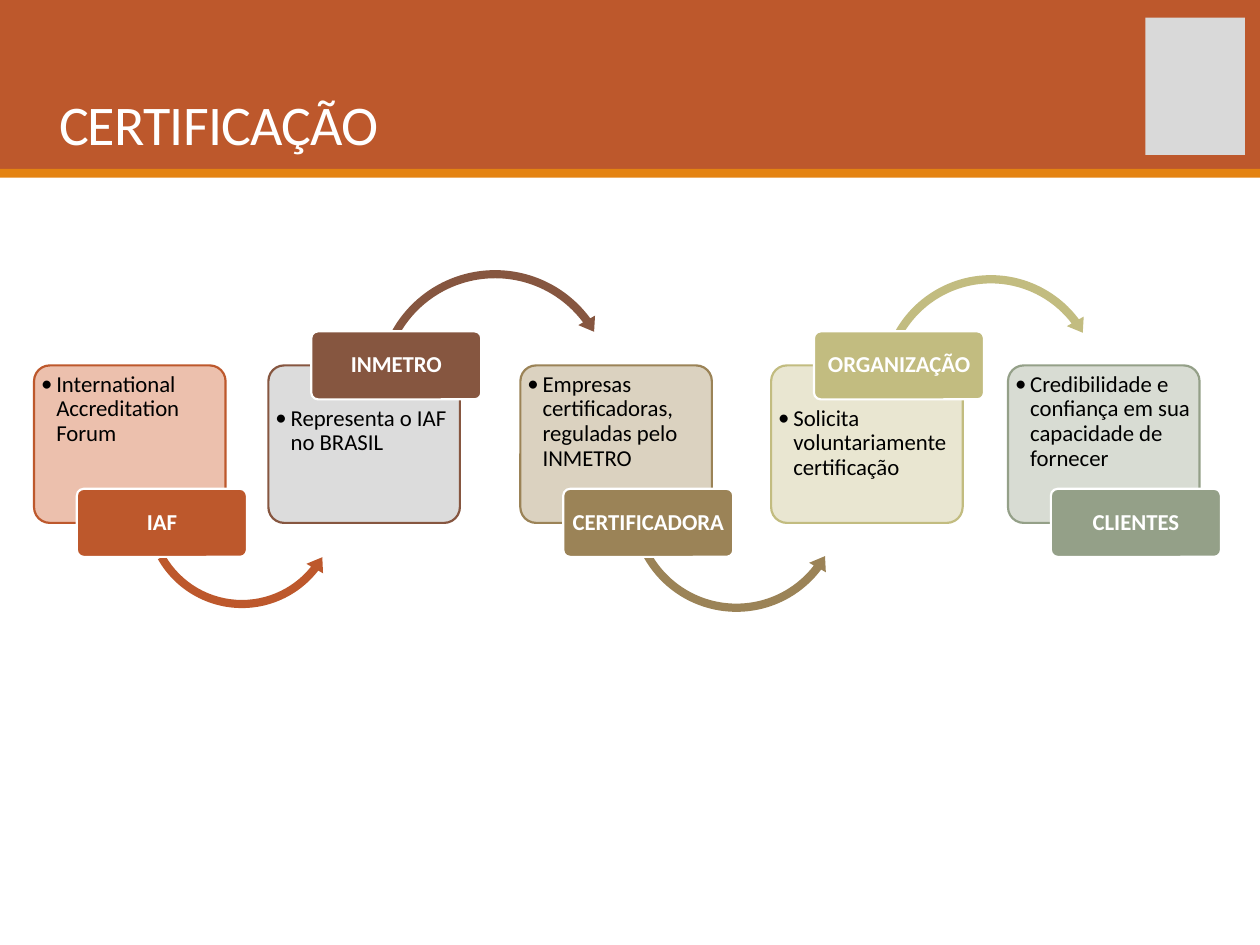
from lxml import etree
from pptx import Presentation
from pptx.dml.color import RGBColor
from pptx.enum.shapes import MSO_SHAPE
from pptx.enum.text import MSO_ANCHOR, PP_ALIGN
from pptx.oxml.ns import qn
from pptx.util import Inches, Pt

RECTANGLE = MSO_SHAPE.RECTANGLE
ROUNDED = MSO_SHAPE.ROUNDED_RECTANGLE
ARROW_BELOW = MSO_SHAPE.LEFT_CIRCULAR_ARROW
ARROW_ABOVE = MSO_SHAPE.CIRCULAR_ARROW
FONT = "Calibri"
COLORS = {
    "rust": "BD582C", "orange": "E48312", "gray": "D9D9D9",
    "brown": "865640", "tan": "9B8357", "olive": "C2BC80", "sage": "94A088",
    "light rust": "EABAA5", "light tan": "D8CEBA",
    "light olive": "E7E4CC", "light sage": "D4D9CF",
    "white": "FFFFFF", "black": "000000",
}

CARD_TOP, CARD_WIDTH, CARD_HEIGHT = 2.9, 1.52, 1.25
TAG_WIDTH, TAG_HEIGHT, TAG_OFFSET = 1.35, 0.54, 0.34

# card left, tag above the card, label, description, color, card fill
STEPS = [
    (0.27, False, "IAF", "International Accreditation Forum", "rust", "light rust"),
    (2.13, True, "INMETRO", "Representa o IAF no BRASIL", "brown", "gray"),
    (4.13, False, "CERTIFICADORA", "Empresas certificadoras, reguladas pelo INMETRO",
     "tan", "light tan"),
    (6.12, True, "ORGANIZAÇÃO", "Solicita voluntariamente certificação",
     "olive", "light olive"),
    (8.0, False, "CLIENTES", "Credibilidade e confiança em sua capacidade de fornecer",
     "sage", "light sage"),
]
# left, top, size, adjustments of the arrow leaving each step but the last
ARROWS = [
    (1.11, 3.25, 1.62, (0.04, 5.081, 22.836, 90.245, 0.047)),
    (2.95, 2.1, 1.96, (0.033, 4.116, 194.129, 125.755, 0.039)),
    (4.96, 3.13, 1.77, (0.037, 4.607, 22.362, 90.245, 0.043)),
    (6.95, 2.14, 1.83, (0.036, 4.428, 193.817, 125.755, 0.042)),
]


def add_box(kind, left, top, width, height, fill, line=None, adjustments=()):
    shape = slide.shapes.add_shape(
        kind, Inches(left), Inches(top), Inches(width), Inches(height))
    shape.shadow.inherit = False
    shape.fill.solid()
    shape.fill.fore_color.rgb = RGBColor.from_string(COLORS[fill])
    if line:
        shape.line.color.rgb = RGBColor.from_string(COLORS[line])
        shape.line.width = Pt(1.25)
    else:
        shape.line.fill.background()
    for index, value in enumerate(adjustments):
        shape.adjustments[index] = value
    return shape


def write_text(shape, text, size, color, anchor, align, insets, spacing=0.9, bold=False):
    """Fill the shape with one paragraph; insets run left, top, right, bottom."""
    frame = shape.text_frame
    frame.word_wrap = True
    frame.vertical_anchor = anchor
    (frame.margin_left, frame.margin_top,
     frame.margin_right, frame.margin_bottom) = map(Inches, insets)
    paragraph = frame.paragraphs[0]
    paragraph.text = text
    paragraph.alignment = align
    paragraph.line_spacing = spacing
    paragraph.font.name = FONT
    paragraph.font.size = Pt(size)
    paragraph.font.bold = bold
    paragraph.font.color.rgb = RGBColor.from_string(COLORS[color])
    return paragraph


presentation = Presentation()
presentation.slide_width = Inches(10)
presentation.slide_height = Inches(7.5)
slide = presentation.slides.add_slide(presentation.slide_layouts[6])

# Header
add_box(RECTANGLE, 0, 0, 10, 1.34, "rust")
add_box(RECTANGLE, 0, 1.34, 10, 0.07, "orange")
add_box(RECTANGLE, 9.09, 0.14, 0.79, 1.09, "gray")
title = slide.shapes.add_textbox(Inches(0.37), Inches(0.18), Inches(8.62), Inches(1.07))
paragraph = write_text(title, "CERTIFICAÇÃO", 32, "white", MSO_ANCHOR.BOTTOM,
                       PP_ALIGN.LEFT, (0.1, 0, 0.1, 0), spacing=0.85)
paragraph.runs[0].font._element.set("spc", "-50")

# Certification chain
for index, (left, tag_above, label, description, color, card_fill) in enumerate(STEPS):
    card = add_box(ROUNDED, left, CARD_TOP, CARD_WIDTH, CARD_HEIGHT, card_fill, color, [0.1])
    fill_color = card._element.spPr.find(qn("a:solidFill"))[0]
    etree.SubElement(fill_color, qn("a:alpha"), val="90000")
    # The rounded corners already inset the text a little
    text_top = 0.29 if tag_above else 0.02
    paragraph = write_text(card, description, 13, "black", MSO_ANCHOR.TOP,
                           PP_ALIGN.LEFT, (0.02, text_top, 0.02, 0.02))
    properties = paragraph._p.get_or_add_pPr()
    properties.set("marL", str(Inches(0.12)))
    properties.set("indent", str(-Inches(0.12)))
    default_font = properties.find(qn("a:defRPr"))
    default_font.addprevious(etree.Element(qn("a:buFont"), typeface=FONT))
    default_font.addprevious(etree.Element(qn("a:buChar"), char="•"))

    if index < len(ARROWS):
        arrow_left, arrow_top, size, adjustments = ARROWS[index]
        add_box(ARROW_ABOVE if tag_above else ARROW_BELOW,
                arrow_left, arrow_top, size, size, color, adjustments=adjustments)

    tag_center = CARD_TOP if tag_above else CARD_TOP + CARD_HEIGHT
    tag = add_box(ROUNDED, left + TAG_OFFSET, tag_center - TAG_HEIGHT / 2,
                  TAG_WIDTH, TAG_HEIGHT, color, "white", [0.1])
    write_text(tag, label, 13, "white", MSO_ANCHOR.MIDDLE, PP_ALIGN.CENTER,
               (0.02, 0.02, 0.02, 0.02), bold=True)

presentation.save("out.pptx")
